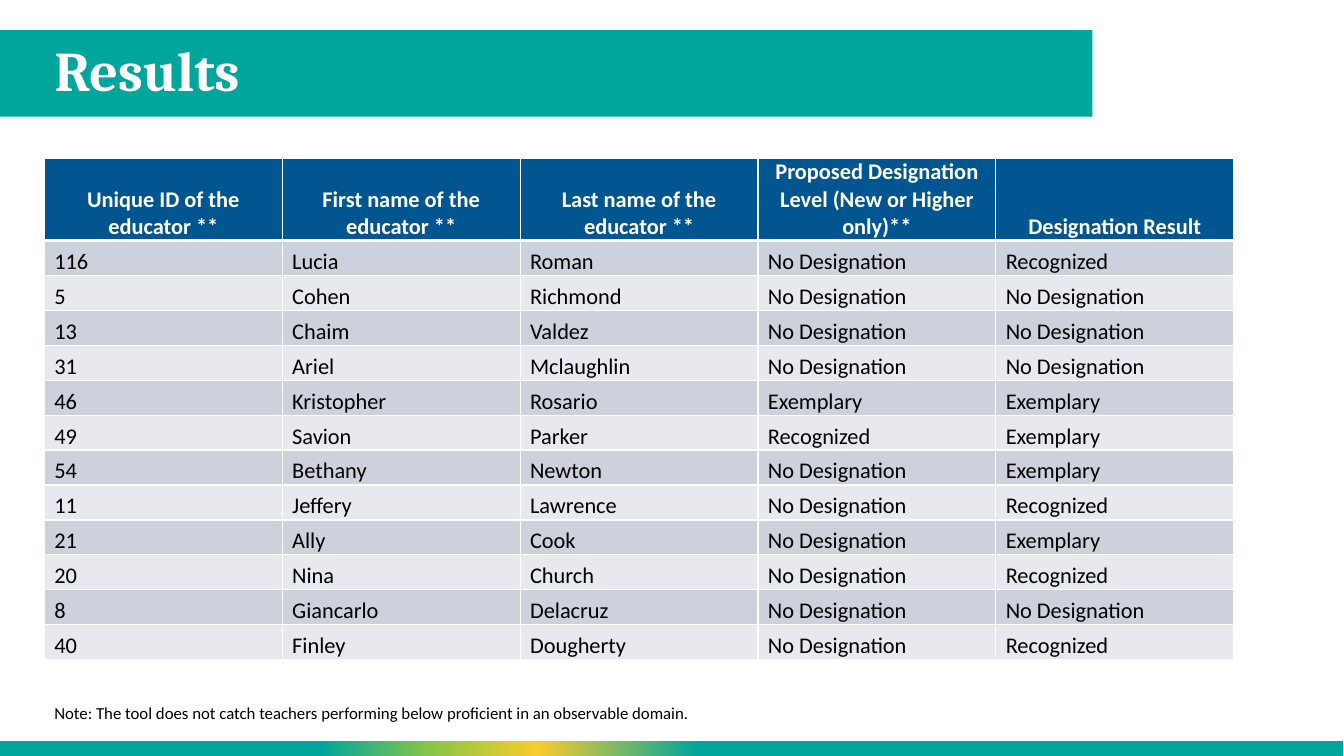
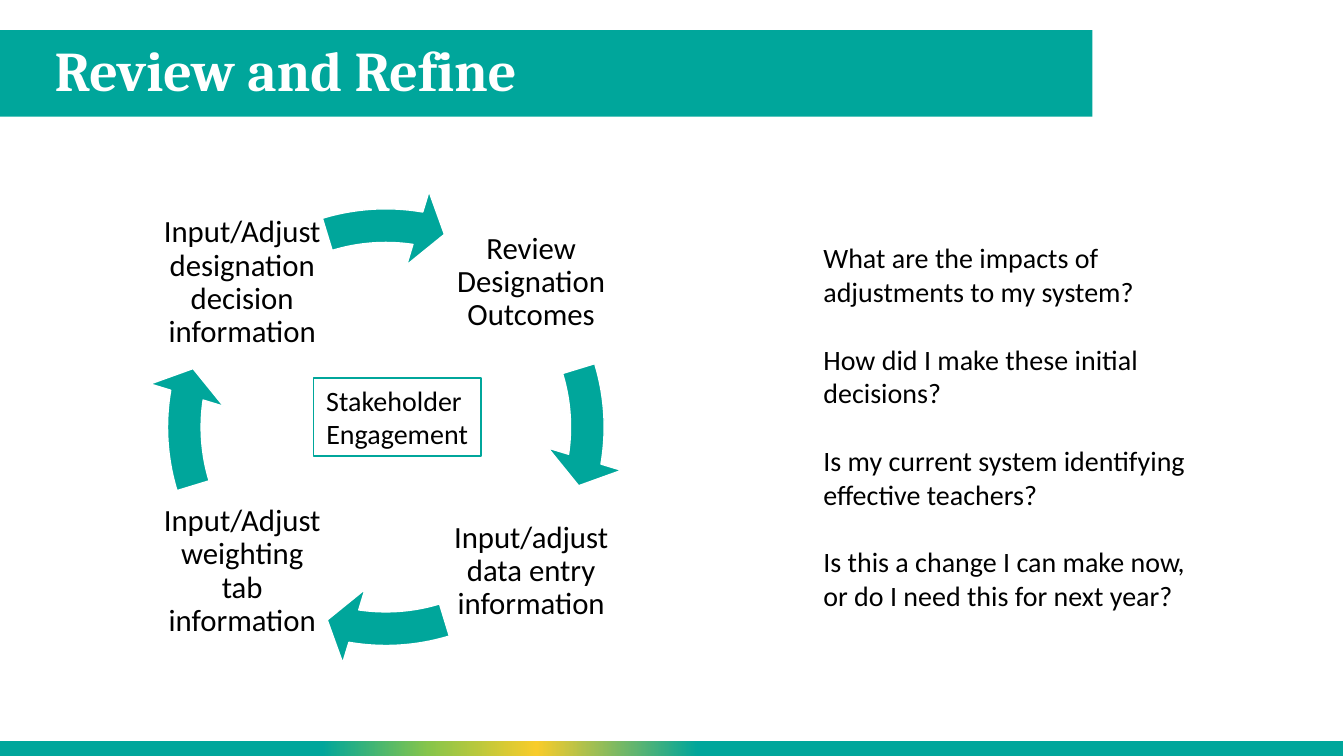
from dataclasses import dataclass
from typing import Any, NamedTuple

from lxml.etree import SubElement
from pptx import Presentation
from pptx.dml.color import RGBColor
from pptx.enum.shapes import MSO_SHAPE as Preset
from pptx.enum.text import MSO_ANCHOR as Anchor, PP_ALIGN as Align
from pptx.oxml.ns import qn
from pptx.util import Cm, Pt

TEAL, NAVY, WHITE, BLACK = "00A69B", "015692", "FFFFFF", "000000"
ROW_FILLS = ("CCD1DC", "E7E9EE")
FOOTER_STOPS = ((0, TEAL), (48, TEAL), (60, "F8CC2B"), (68, "87C54A"), (76, TEAL), (100, TEAL))
HEADING_FONT, BODY_FONT = "Cambria", "Calibri"


class Box(NamedTuple):
    """A place on the slide in centimetres."""

    left: float
    top: float
    width: float
    height: float

    def lengths(self) -> list[Cm]:
        """Return the four measures as slide lengths."""
        return [Cm(measure) for measure in self]


@dataclass(frozen=True)
class TextStyle:
    """The look of a block of text."""

    size: float
    color: str = BLACK
    font: str = BODY_FONT
    bold: bool = False
    align: Align = Align.LEFT
    anchor: Anchor = Anchor.TOP
    line_spacing: float = 1.0
    gap: float = 0
    inset: float | None = None


@dataclass(frozen=True)
class CycleStep:
    """A step of the cycle, at a column and row of its two-by-two grid."""

    text: str
    column: int
    row: int


TITLE_BOX = Box(1.12, 0.76, 26.44, 2.18)
TITLE_BAND = Box(-0.03, 0.76, 27.56, 2.18)
FOOTER_BAND = Box(-0.03, 18.67, 33.88, 0.38)
TITLE_STYLE = TextStyle(40, WHITE, HEADING_FONT, True, anchor=Anchor.MIDDLE, line_spacing=0.9)

TABLE_BOX = Box(1.12, 3.99, 29.97, 12.6)
HEADER_HEIGHT, ROW_HEIGHT, CELL_INDENT = 2.04, 0.88, 0.25
HEADER_STYLE = TextStyle(16, WHITE, bold=True, align=Align.CENTER, anchor=Anchor.BOTTOM, inset=0)
CELL_STYLE = TextStyle(16, anchor=Anchor.BOTTOM, inset=0)
HEADINGS = (
    "Unique ID of the educator **",
    "First name of the educator **",
    "Last name of the educator **",
    "Proposed Designation Level (New or Higher only)**",
    "Designation Result",
)
EDUCATORS = (
    ("116", "Lucia", "Roman", "No Designation", "Recognized"),
    ("5", "Cohen", "Richmond", "No Designation", "No Designation"),
    ("13", "Chaim", "Valdez", "No Designation", "No Designation"),
    ("31", "Ariel", "Mclaughlin", "No Designation", "No Designation"),
    ("46", "Kristopher", "Rosario", "Exemplary", "Exemplary"),
    ("49", "Savion", "Parker", "Recognized", "Exemplary"),
    ("54", "Bethany", "Newton", "No Designation", "Exemplary"),
    ("11", "Jeffery", "Lawrence", "No Designation", "Recognized"),
    ("21", "Ally", "Cook", "No Designation", "Exemplary"),
    ("20", "Nina", "Church", "No Designation", "Recognized"),
    ("8", "Giancarlo", "Delacruz", "No Designation", "No Designation"),
    ("40", "Finley", "Dougherty", "No Designation", "Recognized"),
)
NOTE = "Note: The tool does not catch teachers performing below proficient in an observable domain."

CYCLE_BOX = Box(3.68, 4.72, 12.09, 12.09)
STEP_LEFT, STEP_TOP, STEP_SIZE, STEP_PITCH = 3.96, 4.98, 4.29, 7.28
STEP_STYLE = TextStyle(22, align=Align.CENTER, anchor=Anchor.MIDDLE, line_spacing=0.9, inset=0.08)
CYCLE_STEPS = (
    CycleStep("Review Designation Outcomes", 1, 0),
    CycleStep("Input/adjust data entry information", 1, 1),
    CycleStep("Input/Adjust weighting tab information", 0, 1),
    CycleStep("Input/Adjust designation decision information", 0, 0),
)
ARROW_THICKNESS, ARROW_HEAD_WIDTH = 0.07, 0.08
ARROW_HEAD, ARROW_END, ARROW_START = 7.76, 9.14, 343.1
DEGREE = 0.6
ENGAGEMENT = ("Stakeholder ", "Engagement")
QUESTIONS = (
    "What are the impacts of adjustments to my system?",
    "How did I make these initial decisions?",
    "Is my current system identifying effective teachers?",
    "Is this a change I can make now, or do I need this for next year?",
)


def rgb(code: str) -> RGBColor:
    """Return the colour for a hex string."""
    return RGBColor.from_string(code)


def apply(target: Any, formats: dict[str, Any]) -> None:
    """Set each named attribute of the target."""
    for name, value in formats.items():
        setattr(target, name, value)


def write(frame: Any, lines: tuple[str, ...], style: TextStyle) -> None:
    """Write one paragraph per line in the given style."""
    apply(frame, {"word_wrap": True, "vertical_anchor": style.anchor})
    if style.inset is not None:
        apply(frame, {f"margin_{side}": Cm(style.inset) for side in ("left", "top", "right", "bottom")})
    for index, line in enumerate(lines):
        paragraph = frame.add_paragraph() if index else frame.paragraphs[0]
        paragraph.text = line
        apply(paragraph, {"alignment": style.align, "line_spacing": style.line_spacing})
        if index and style.gap:
            paragraph.space_before = Pt(style.gap)
        font = paragraph.runs[0].font
        apply(font, {"size": Pt(style.size), "name": style.font, "bold": style.bold})
        font.color.rgb = rgb(style.color)


def add_preset(slide: Any, preset: Preset, box: Box, fill: str, line: str | None = None) -> Any:
    """Add a flat preset shape."""
    shape = slide.shapes.add_shape(preset, *box.lengths())
    shape.shadow.inherit = False
    shape.fill.solid()
    shape.fill.fore_color.rgb = rgb(fill)
    if line:
        shape.line.color.rgb = rgb(line)
        shape.line.width = Pt(1)
    else:
        shape.line.fill.background()
    return shape


def add_text(slide: Any, box: Box, lines: tuple[str, ...], style: TextStyle) -> None:
    """Add a wrapped text box."""
    write(slide.shapes.add_textbox(*box.lengths()).text_frame, lines, style)


def add_color(parent: Any, code: str) -> None:
    """Append a colour element."""
    SubElement(parent, qn("a:srgbClr"), val=code)


def add_bands(slide: Any) -> None:
    """Place the title and footer bands on the layout of the slide."""
    title_band = add_preset(slide, Preset.RECTANGLE, TITLE_BAND, TEAL)
    footer_band = add_preset(slide, Preset.RECTANGLE, FOOTER_BAND, TEAL)
    footer_band.fill.gradient()
    footer_band.fill.gradient_angle = 180
    stops = footer_band.element.spPr.find(f".//{qn('a:gsLst')}")
    for stop in list(stops):
        stops.remove(stop)
    for position, code in FOOTER_STOPS:
        add_color(SubElement(stops, qn("a:gs"), pos=str(position * 1000)), code)
    for index, band in enumerate((title_band, footer_band)):
        slide.slide_layout.shapes.element.insert(2 + index, band.element)


def add_titled_slide(deck: Any, title: str) -> Any:
    """Add a title-only slide with its heading in the band."""
    slide = deck.slides.add_slide(deck.slide_layouts[5])
    heading = slide.shapes.title
    apply(heading, dict(zip(("left", "top", "width", "height"), TITLE_BOX.lengths())))
    write(heading.text_frame, (title,), TITLE_STYLE)
    return slide


def format_cell(cell: Any, text: str, style: TextStyle, fill: str, bottom: float, top: float) -> None:
    """Fill a table cell with text, white borders and a colour."""
    write(cell.text_frame, (text,), style)
    cell.vertical_anchor = style.anchor
    apply(cell, {f"margin_{side}": 0 for side in ("left", "top", "right", "bottom")})
    properties = cell._tc.get_or_add_tcPr()
    for side, width in (("L", 1), ("R", 1), ("T", top), ("B", bottom)):
        border = SubElement(properties, qn(f"a:ln{side}"), w=str(Pt(width)))
        add_color(SubElement(border, qn("a:solidFill")), WHITE)
    cell.fill.solid()
    cell.fill.fore_color.rgb = rgb(fill)


def add_results(slide: Any) -> None:
    """Draw the table of designations and its note."""
    rows = (HEADINGS, *EDUCATORS)
    table = slide.shapes.add_table(len(rows), len(HEADINGS), *TABLE_BOX.lengths()).table
    for column in table.columns:
        column.width = Cm(TABLE_BOX.width / len(HEADINGS))
    for index, values in enumerate(rows):
        is_header = index == 0
        table.rows[index].height = Cm(HEADER_HEIGHT if is_header else ROW_HEIGHT)
        fill = NAVY if is_header else ROW_FILLS[(index - 1) % 2]
        style = HEADER_STYLE if is_header else CELL_STYLE
        for column, value in enumerate(values):
            cell = table.cell(index, column)
            format_cell(cell, value, style, fill, 3 if is_header else 1, 3 if index == 1 else 1)
            if not is_header:
                cell.margin_left = Cm(CELL_INDENT)
    add_text(slide, Box(1.12, 17.58, 24.66, 0.76), (NOTE,), TextStyle(12))


def add_cycle(slide: Any) -> None:
    """Draw the four steps, each followed by its arrow, a quarter turn apart."""
    for index, step in enumerate(CYCLE_STEPS):
        left, top = STEP_LEFT + step.column * STEP_PITCH, STEP_TOP + step.row * STEP_PITCH
        add_text(slide, Box(left, top, STEP_SIZE, STEP_SIZE), (step.text,), STEP_STYLE)
        arrow = add_preset(slide, Preset.CIRCULAR_ARROW, CYCLE_BOX, TEAL, WHITE)
        angles = (ARROW_HEAD, ARROW_END + 90 * index, (ARROW_START + 90 * index) % 360)
        settings = (ARROW_THICKNESS, *(angle * DEGREE for angle in angles), ARROW_HEAD_WIDTH)
        for position, setting in enumerate(settings):
            arrow.adjustments[position] = setting


def add_review(slide: Any) -> None:
    """Draw the review cycle, its centre and the guiding questions."""
    add_cycle(slide)
    centre = add_preset(slide, Preset.RECTANGLE, Box(7.9, 9.53, 4.22, 1.96), WHITE, TEAL)
    write(centre.text_frame, ENGAGEMENT, TextStyle(20, align=Align.CENTER))
    questions = add_preset(slide, Preset.RECTANGLE, Box(20.5, 5.94, 10.19, 9.65), WHITE)
    write(questions.text_frame, QUESTIONS, TextStyle(20, gap=24.4))


def main() -> None:
    """Build and save the deck."""
    deck = Presentation()
    apply(deck, {"slide_width": Cm(33.87), "slide_height": Cm(19.05)})
    results = add_titled_slide(deck, "Results")
    add_bands(results)
    add_results(results)
    add_review(add_titled_slide(deck, "Review and Refine"))
    deck.save("out.pptx")


if __name__ == "__main__":
    main()
